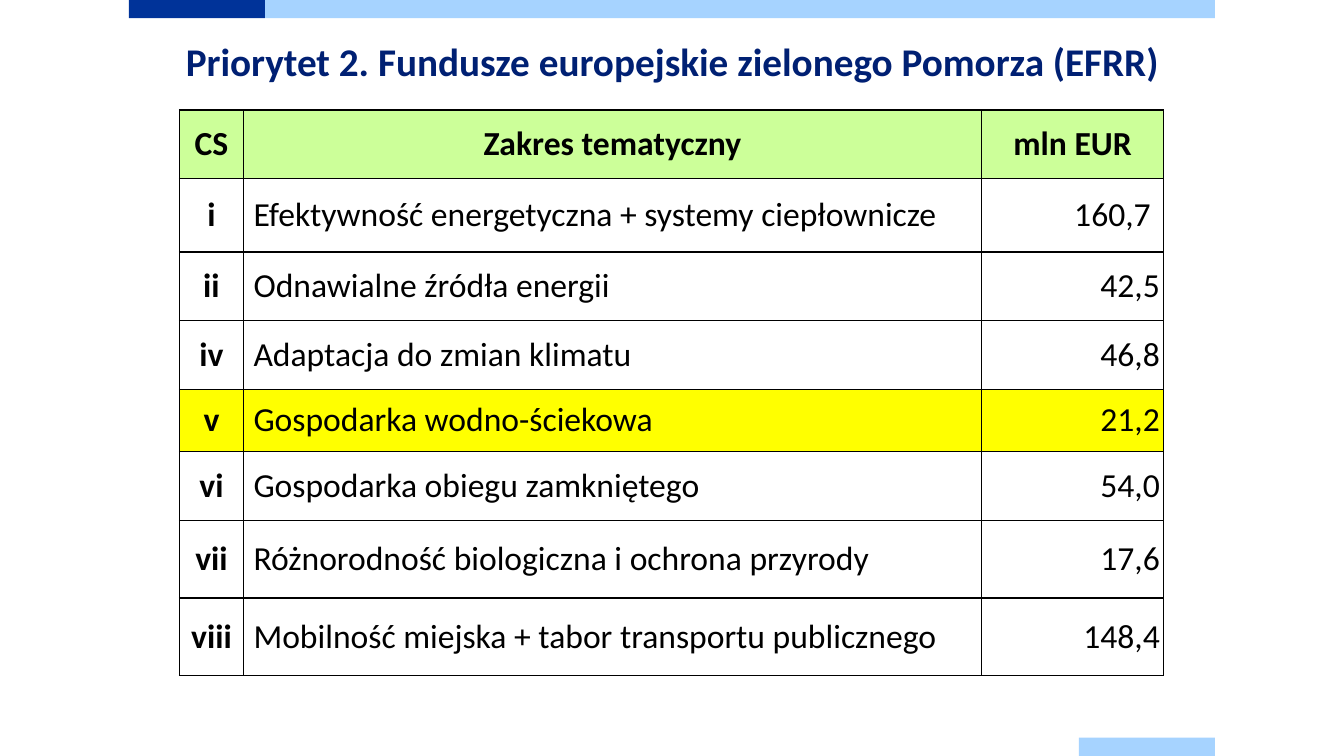
from lxml import etree
from pptx import Presentation
from pptx.dml.color import RGBColor
from pptx.enum.shapes import MSO_SHAPE
from pptx.enum.text import MSO_ANCHOR, MSO_AUTO_SIZE, PP_ALIGN
from pptx.oxml.ns import qn
from pptx.util import Cm, Pt

LEFT, CENTER, RIGHT = PP_ALIGN.LEFT, PP_ALIGN.CENTER, PP_ALIGN.RIGHT
MIDDLE = MSO_ANCHOR.MIDDLE
RECTANGLE = MSO_SHAPE.RECTANGLE
NO_AUTOFIT = MSO_AUTO_SIZE.NONE

NAVY = RGBColor(0x00, 0x20, 0x73)
BLUE = RGBColor(0x00, 0x33, 0x99)
SKY = RGBColor(0xA6, 0xD3, 0xFF)
GREEN = RGBColor(0xCC, 0xFF, 0x99)
YELLOW = RGBColor(0xFF, 0xFF, 0x00)
WHITE = RGBColor(0xFF, 0xFF, 0xFF)
BLACK = RGBColor(0x00, 0x00, 0x00)

HEADINGS = ("CS", "Zakres tematyczny", "mln EUR")
OBJECTIVES = [
    ("i", "Efektywność energetyczna + systemy ciepłownicze", "160,7"),
    ("ii", "Odnawialne źródła energii", "42,5"),
    ("iv", "Adaptacja do zmian klimatu", "46,8"),
    ("v", "Gospodarka wodno-ściekowa", "21,2"),
    ("vi", "Gospodarka obiegu zamkniętego", "54,0"),
    ("vii", "Różnorodność biologiczna i ochrona przyrody", "17,6"),
    ("viii", "Mobilność miejska + tabor transportu publicznego", "148,4"),
]
HIGHLIGHTED = "v"
COLUMN_WIDTHS = (1.62, 18.59, 4.6)
ROW_HEIGHTS = (1.73, 1.85, 1.73, 1.73, 1.57, 1.73, 1.96, 1.96)


def write_text(frame, text, *, size=24, color=BLACK, bold=False, align=LEFT,
               font="Calibri"):
    """Fill a text frame with one formatted paragraph."""
    frame.text = text
    para = frame.paragraphs[0]
    para.alignment = align
    para.font.name = font
    para.font.size = Pt(size)
    para.font.bold = bold
    para.font.color.rgb = color


def add_borders(cell, color=BLACK, width=1):
    """Draw a solid line on all four sides of a table cell."""
    properties = cell._tc.get_or_add_tcPr()
    for side in ("a:lnL", "a:lnR", "a:lnT", "a:lnB"):
        line = etree.SubElement(properties, qn(side), w=str(Pt(width)))
        fill = etree.SubElement(line, qn("a:solidFill"))
        etree.SubElement(fill, qn("a:srgbClr"), val=str(color))


class PriorityPage:
    """Holds the current slide and adds its elements."""

    def __init__(self, deck):
        self.page = deck.slides.add_slide(deck.slide_layouts[5])

    def bar(self, left, top, width, color):
        box = self.page.shapes.add_shape(
            RECTANGLE, Cm(left), Cm(top), Cm(width), Cm(0.46))
        box.shadow.inherit = False
        box.fill.solid()
        box.fill.fore_color.rgb = color
        box.line.fill.background()

    def title(self, text, left, top, width, height):
        box = self.page.shapes.title
        box.left, box.top = Cm(left), Cm(top)
        box.width, box.height = Cm(width), Cm(height)
        frame = box.text_frame
        frame.auto_size = NO_AUTOFIT
        frame.vertical_anchor = MIDDLE
        write_text(frame, text, size=28, color=NAVY, bold=True)

    def cell(self, cell, text, *, fill, bold, align, margins):
        cell.margin_left, cell.margin_right = (Cm(side) for side in margins)
        cell.margin_top = cell.margin_bottom = 0
        cell.vertical_anchor = MIDDLE
        add_borders(cell)
        cell.fill.solid()
        cell.fill.fore_color.rgb = fill
        write_text(cell.text_frame, text, bold=bold, align=align)

    def table(self, left, top):
        rows = [HEADINGS] + OBJECTIVES
        table = self.page.shapes.add_table(
            len(rows), len(HEADINGS), Cm(left), Cm(top),
            Cm(sum(COLUMN_WIDTHS)), Cm(sum(ROW_HEIGHTS))).table
        table.first_row = table.horz_banding = False
        for column, width in zip(table.columns, COLUMN_WIDTHS):
            column.width = Cm(width)
        for row, height in zip(table.rows, ROW_HEIGHTS):
            row.height = Cm(height)

        aligns = (CENTER, LEFT, RIGHT)
        for i, row in enumerate(rows):
            heading = i == 0
            fill = (GREEN if heading
                    else YELLOW if row[0] == HIGHLIGHTED else WHITE)
            # The first amount stands a little further from the edge
            amount_margin = 0.33 if i == 1 else 0.1
            margins = ((0.2, 0.2), (0.25, 0), (0, amount_margin))
            for j, text in enumerate(row):
                self.cell(table.cell(i, j), text, fill=fill,
                          bold=heading or j == 0,
                          align=CENTER if heading else aligns[j],
                          margins=(0, 0) if heading else margins[j])


def main():
    deck = Presentation()
    deck.slide_width, deck.slide_height = Cm(33.87), Cm(19.05)
    priority = PriorityPage(deck)

    # Decorative bars
    priority.bar(3.25, 0, 3.43, BLUE)
    priority.bar(6.68, 0, 23.94, SKY)
    priority.bar(27.19, 18.59, 3.43, SKY)

    # Title and funding table
    priority.title("Priorytet 2. Fundusze europejskie zielonego Pomorza (EFRR)",
                   4.43, 0.75, 25.2, 1.57)
    priority.table(4.52, 2.77)

    deck.save("out.pptx")


if __name__ == "__main__":
    main()
